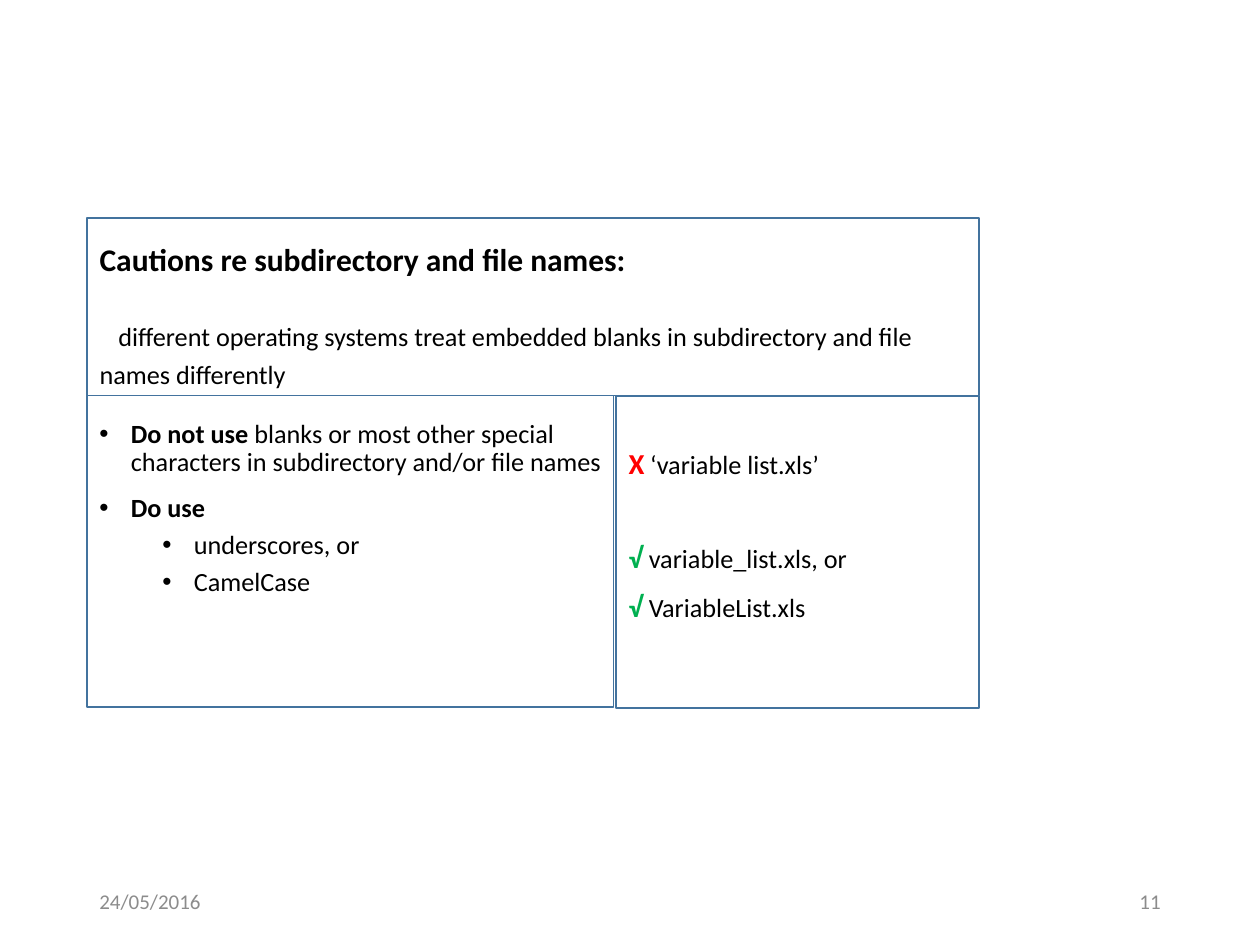
from pptx import Presentation
from pptx.dml.color import RGBColor
from pptx.enum.shapes import MSO_SHAPE as Shape
from pptx.enum.text import MSO_ANCHOR as Anchor, MSO_AUTO_SIZE as AutoSize, PP_ALIGN as Align
from pptx.oxml.ns import qn
from pptx.util import Inches, Pt

FONT = "Calibri"
COLORS = {"text": "000000", "wrong": "FF0000", "right": "00B050",
          "footer": "8C8C8C", "border": "43739E"}

# Grid edges in inches
LEFT, SPLIT, RIGHT = 0.69, 4.88, 7.77
TOP, MIDDLE = 1.73, 3.14
GAP = 0.02
FOOTER_TOP, FOOTER_WIDTH, FOOTER_HEIGHT = 6.95, 2.25, 0.4


def color(name):
    return RGBColor.from_string(COLORS[name])


def place(shape, left, top, width, height):
    shape.left, shape.top = Inches(left), Inches(top)
    shape.width, shape.height = Inches(width), Inches(height)


def add_text_box(slide, left, top, width, height):
    box = slide.shapes.add_textbox(*map(Inches, (left, top, width, height)))
    box.text_frame.word_wrap = True
    return box.text_frame


def style_font(font, size, color_name="text", bold=False):
    font.name, font.size, font.bold = FONT, Pt(size), bold
    font.color.rgb = color(color_name)


def next_paragraph(frame, space_before=0, line_spacing=0.9):
    """Return the empty first paragraph, or a new one, with its spacing set."""
    first = frame.paragraphs[0]
    paragraph = frame.add_paragraph() if first.runs else first
    paragraph.space_before = Pt(space_before)
    paragraph.line_spacing = line_spacing
    return paragraph


def add_run(paragraph, text, size=15, color_name="text", bold=False):
    run = paragraph.add_run()
    run.text = text
    style_font(run.font, size, color_name, bold)


def set_indent(paragraph, margin, first_line):
    properties = paragraph._p.get_or_add_pPr()
    properties.set("marL", str(Inches(margin)))
    properties.set("indent", str(Inches(first_line)))
    return properties


def add_bullet(frame, strong="", plain="", level=0):
    paragraph = next_paragraph(frame, space_before=5 if level else 10)
    paragraph.level = level
    properties = set_indent(paragraph, 0.25 + 0.5 * level, -0.25)
    font = properties.makeelement(qn("a:buFont"), {"typeface": "Arial"})
    bullet = properties.makeelement(qn("a:buChar"), {"char": "•"})
    properties.extend([font, bullet])
    if strong:
        add_run(paragraph, strong, bold=True)
    if plain:
        add_run(paragraph, plain)


def add_example(frame, mark, mark_color, file_name, space_before):
    paragraph = next_paragraph(frame, space_before)
    add_run(paragraph, mark, 16.5, mark_color, bold=True)
    add_run(paragraph, f" {file_name}")


def add_frame(slide, left, top, width, height):
    frame = slide.shapes.add_shape(
        Shape.RECTANGLE, *map(Inches, (left, top, width, height)))
    frame.shadow.inherit = False
    frame.fill.background()
    frame.line.color.rgb = color("border")
    frame.line.width = Pt(1)


def add_footer(slide, left, text, alignment):
    frame = add_text_box(slide, left, FOOTER_TOP, FOOTER_WIDTH, FOOTER_HEIGHT)
    frame.vertical_anchor = Anchor.MIDDLE
    paragraph = frame.paragraphs[0]
    paragraph.text = text
    paragraph.alignment = alignment
    style_font(paragraph.font, 12, "footer")


def fill_title(title):
    place(title, LEFT, 1.88, 6.79, 1.27)
    frame = title.text_frame
    frame.word_wrap = True
    frame.auto_size = AutoSize.NONE
    frame.vertical_anchor = Anchor.MIDDLE
    heading = next_paragraph(frame)
    add_run(heading, "Cautions re subdirectory and file names:", 18, bold=True)
    reason = next_paragraph(frame, space_before=20, line_spacing=Pt(22))
    set_indent(reason, 0, 0.15)
    add_run(reason, "different operating systems treat embedded blanks "
                    "in subdirectory and file names differently")
    for paragraph in frame.paragraphs:
        paragraph.alignment = Align.LEFT


def add_rules(slide):
    frame = add_text_box(slide, LEFT, 3.29, 4.25, 2.61)
    add_bullet(frame, "Do not use ", "blanks or most other special characters "
                                     "in subdirectory and/or file names")
    add_bullet(frame, "Do use")
    for choice in ("underscores, or", "CamelCase"):
        add_bullet(frame, plain=choice, level=1)


def add_examples(slide):
    frame = add_text_box(slide, SPLIT + GAP / 2, MIDDLE, 2.73, 2.27)
    frame.margin_top = Inches(0.43)
    add_example(frame, "Х", "wrong", "‘variable list.xls’", 0)
    add_example(frame, "√", "right", "variable_list.xls, or", 36)
    add_example(frame, "√", "right", "VariableList.xls", 10)


def main():
    presentation = Presentation()
    presentation.slide_width, presentation.slide_height = Inches(10), Inches(7.5)
    slide = presentation.slides.add_slide(presentation.slide_layouts[5])

    fill_title(slide.shapes.title)
    add_rules(slide)
    add_examples(slide)
    add_footer(slide, LEFT, "24/05/2016", Align.LEFT)
    add_footer(slide, 10 - LEFT - FOOTER_WIDTH, "11", Align.RIGHT)

    add_frame(slide, LEFT, MIDDLE, SPLIT - GAP / 2 - LEFT, 2.47)
    add_frame(slide, SPLIT + GAP / 2, MIDDLE, RIGHT - SPLIT - GAP / 2, 2.48)
    add_frame(slide, LEFT, TOP, RIGHT - LEFT, MIDDLE - TOP)

    presentation.save("out.pptx")


if __name__ == "__main__":
    main()
